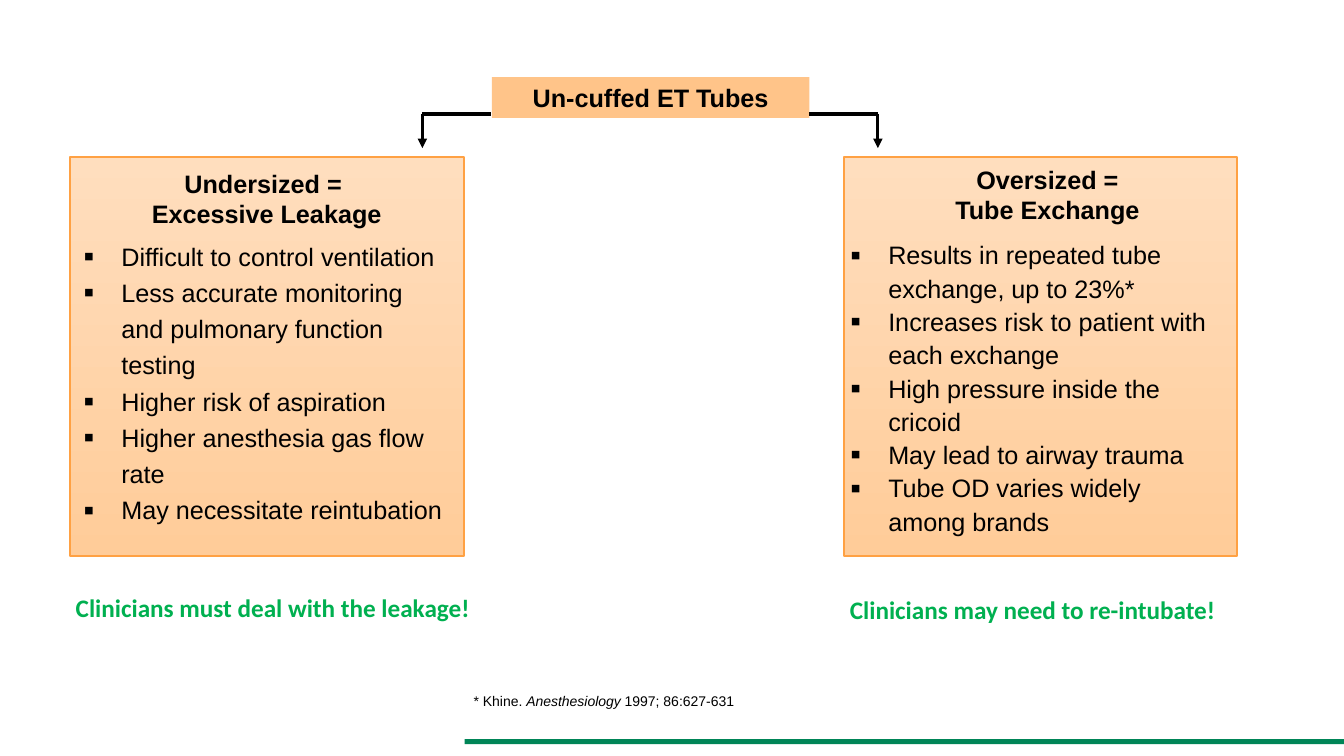
from lxml.etree import SubElement
from pptx import Presentation
from pptx.dml.color import RGBColor
from pptx.enum.shapes import MSO_CONNECTOR, MSO_SHAPE
from pptx.enum.text import MSO_AUTO_SIZE, PP_ALIGN
from pptx.oxml.ns import qn
from pptx.util import Pt

BLACK = RGBColor(0x00, 0x00, 0x00)
GREEN = RGBColor(0x00, 0xB0, 0x50)
FOOTER_GREEN = RGBColor(0x00, 0x85, 0x57)
TITLE_ORANGE = RGBColor(0xFF, 0xC4, 0x89)
PANEL_TOP = RGBColor(0xFF, 0xDE, 0xBE)
PANEL_BOTTOM = RGBColor(0xFF, 0xCC, 0x99)
PANEL_LINE = RGBColor(0xFF, 0xA1, 0x43)

BODY = {"name": "Arial", "size": Pt(18)}
HEADING = {**BODY, "bold": True}
CALLOUT = {"name": "Calibri", "size": Pt(18), "bold": True}
CITATION = {"name": "Arial", "size": Pt(10)}
CENTERED = {"alignment": PP_ALIGN.CENTER}


class SlideBuilder:
    def __init__(self, slide):
        self.s = slide

    def rect(self, box, fill):
        sp = self.s.shapes.add_shape(MSO_SHAPE.RECTANGLE, *map(Pt, box))
        sp.shadow.inherit = False
        sp.fill.solid()
        sp.fill.fore_color.rgb = fill
        sp.line.fill.background()
        return sp

    def panel(self, box):
        sp = self.rect(box, PANEL_TOP)
        sp.fill.gradient()
        sp.fill.gradient_angle = 270
        for stop, color in zip(sp.fill.gradient_stops, (PANEL_TOP, PANEL_BOTTOM)):
            stop.color.rgb = color
        sp.line.color.rgb = PANEL_LINE
        sp.line.width = Pt(1.5)

    def fill_text(self, sp, paragraphs, font, layout, color=BLACK, bullet=False, wrap=True):
        tf = sp.text_frame
        tf.word_wrap = wrap
        tf.auto_size = MSO_AUTO_SIZE.SHAPE_TO_FIT_TEXT
        for i, runs in enumerate(paragraphs):
            p = tf.add_paragraph() if i else tf.paragraphs[0]
            if bullet:
                self.bullet(p)
            for name, value in layout.items():
                setattr(p, name, value)
            for text in runs:
                if text.startswith("\v"):
                    p.add_line_break()
                r = p.add_run()
                r.text = text.lstrip("\v")
                for name, value in font.items():
                    setattr(r.font, name, value)
                r.font.color.rgb = color
        return tf

    def text(self, box, paragraphs, font, layout, **options):
        sp = self.s.shapes.add_textbox(*map(Pt, box))
        return self.fill_text(sp, paragraphs, font, layout, **options)

    def bullet(self, p):
        pPr = p._p.get_or_add_pPr()
        pPr.set("marL", str(Pt(27)))
        pPr.set("indent", str(Pt(-27)))
        SubElement(pPr, qn("a:buSzPct"), val="120000")
        SubElement(pPr, qn("a:buFont"), typeface="Arial")
        SubElement(pPr, qn("a:buChar"), char="▪")

    def line(self, start, end, arrow=False):
        cx = self.s.shapes.add_connector(
            MSO_CONNECTOR.STRAIGHT, *map(Pt, (*start, *end)))
        cx.line.color.rgb = BLACK
        cx.line.width = Pt(2.25)
        spPr = cx._element.spPr
        if arrow:
            SubElement(spPr.find(qn("a:ln")), qn("a:tailEnd"), type="triangle")
        SubElement(spPr, qn("a:effectLst"))

    def elbow(self, start_x, turn_x, top, bottom):
        self.line((start_x, top), (turn_x, top))
        self.line((turn_x, top), (turn_x, bottom), arrow=True)


def main():
    prs = Presentation()
    prs.slide_width, prs.slide_height = Pt(960), Pt(540)
    s = SlideBuilder(prs.slides.add_slide(prs.slide_layouts[6]))

    s.rect((332, 528, 628, 3.6), FOOTER_GREEN)
    for left in (602.6, 50):
        s.panel((left, 112.2, 281.2, 285))

    title = s.rect((351.4, 55.1, 226.8, 29.1), TITLE_ORANGE)
    s.fill_text(title, [["Un-cuffed ET Tubes"]], HEADING, CENTERED)

    s.text((70.6, 116.6, 239.8, 50.9),
           [["Undersized = ", "\vExcessive Leakage"]], HEADING, CENTERED)
    s.text((645.6, 113.8, 205.2, 50.9),
           [["Oversized ="], ["Tube Exchange"]], HEADING, CENTERED)

    s.text((600.4, 165.6, 277.4, 221),
           [["Results in repeated tube exchange, up to 23%*"],
            ["Increases risk to patient with each exchange"],
            ["High pressure inside the cricoid"],
            ["May lead to airway trauma"],
            ["Tube OD varies widely among brands"]],
           BODY, {"line_spacing": 1.1}, bullet=True)
    s.text((52.6, 164.2, 275.8, 214.6),
           [["Difficult to control ventilation"],
            ["Less accurate monitoring and pulmonary function testing"],
            ["Higher risk of aspiration"],
            ["Higher anesthesia gas flow rate"],
            ["May necessitate reintubation"]],
           BODY, {"line_spacing": 1.2}, bullet=True)

    s.text((30, 419.8, 329.8, 29.1),
           [["Clinicians must deal with the leakage!"]], CALLOUT, CENTERED, color=GREEN)
    s.text((596.9, 420.8, 281.5, 29.1),
           [["Clinicians may need to re-intubate!"]], CALLOUT, CENTERED, color=GREEN)

    citation = s.text((331.2, 491, 234.7, 19.4),
                      [["* Khine. ", "Anesthesiology", " 1997; 86:627-631"]],
                      CITATION, {}, wrap=False)
    citation.paragraphs[0].runs[1].font.italic = True

    for start_x, turn_x in ((350.6, 301.7), (578.2, 627.1)):
        s.elbow(start_x, turn_x, 81.4, 105.8)

    prs.save("out.pptx")


if __name__ == "__main__":
    main()
